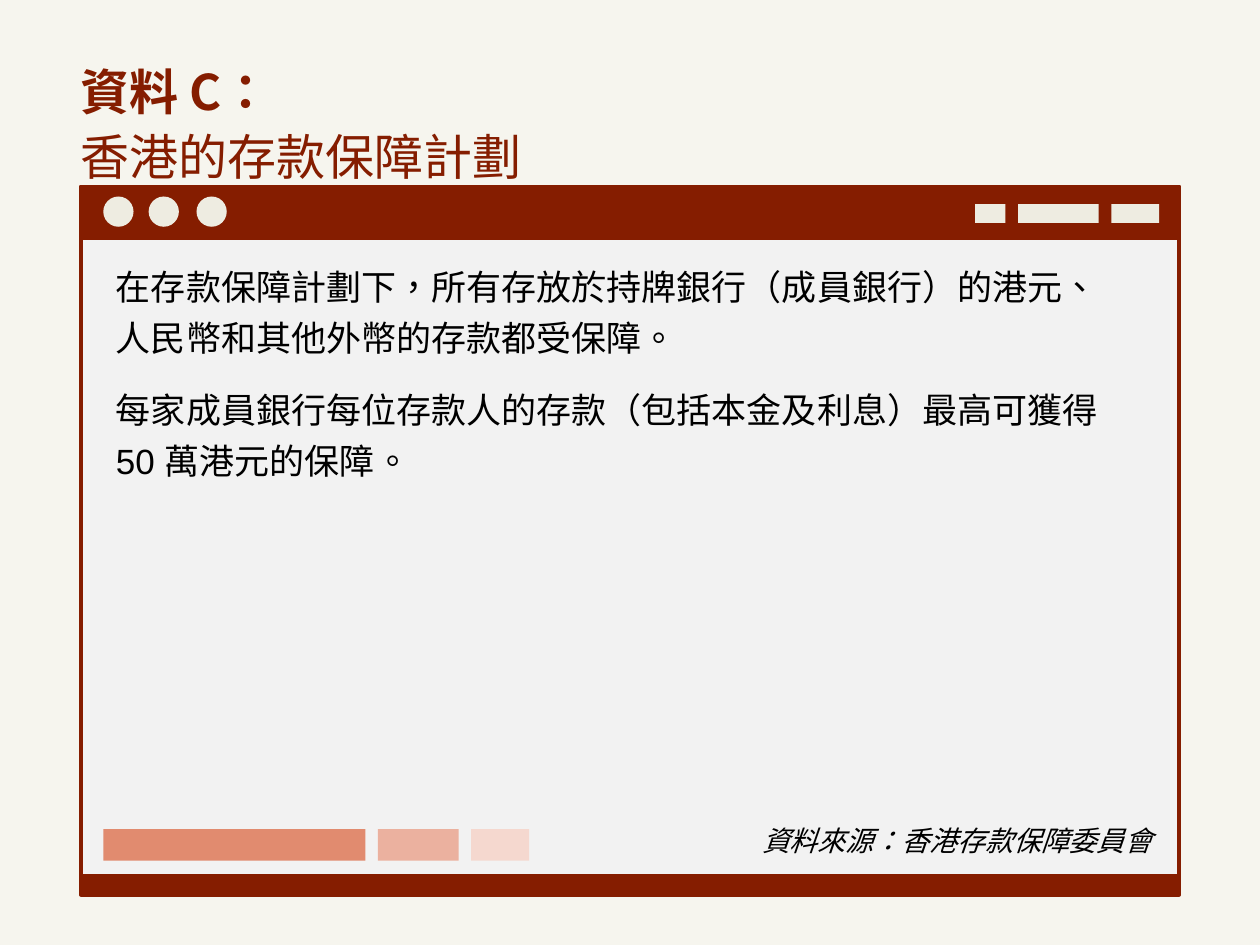
"""Build the slide on the Hong Kong deposit protection scheme."""
from lxml import etree
from pptx import Presentation
from pptx.dml.color import RGBColor
from pptx.enum import shapes, text
from pptx.oxml import ns
from pptx.util import Inches, Pt

CJK = "Noto Sans CJK SC"
MAROON, CREAM, PAPER, PANEL, BLACK = "851D00", "EEECE1", "F6F5EE", "F2F2F2", "000000"
TITLE = [("資料 C：", True), ("香港的存款保障計劃", False)]
POINTS = [
    ["在存款保障計劃下，所有存放於持牌銀行（成員銀行）的港元、", "人民幣和其他外幣的存款都受保障。"],
    ["每家成員銀行每位存款人的存款（包括本金及利息）最高可獲得", "50 萬港元的保障。"],
]
CREDIT = "資料來源：香港存款保障委員會"

LEFT, TOP, WIDTH, HEIGHT = 0.64, 1.48, 8.72, 5.62
HEADER, FOOTER, MARGIN, GAP = 0.42, 0.16, 0.18, 0.1
FRAME = [
    (TOP, HEIGHT, PANEL, 2.25),
    (TOP, HEADER, MAROON, 1),
    (TOP + HEIGHT - FOOTER, FOOTER, MAROON, 1),
]
DOTS = [0.82, 1.18, 1.56]
TABS = [(0.24, CREAM), (0.64, CREAM), (0.38, CREAM)]
SWATCHES = [(2.08, "E18B6F"), (0.64, "EBB19F"), (0.46, "F5D8CF")]


def color(value):
    return RGBColor.from_string(value)


def place(item, left, top, width, height):
    item.left, item.top, item.width, item.height = map(Inches, (left, top, width, height))


def draw(window, kind, box, fill, border=None):
    piece = window.shapes.add_shape(kind, *map(Inches, box))
    piece.shadow.inherit = False
    piece.fill.solid()
    piece.fill.fore_color.rgb = color(fill)
    if border:
        piece.line.color.rgb = color(MAROON)
        piece.line.width = Pt(border)
    else:
        piece.line.fill.background()


def draw_row(window, left, top, height, blocks):
    for width, fill in blocks:
        draw(window, shapes.MSO_SHAPE.RECTANGLE, (left, top, width, height), fill)
        left += width + GAP


def write(paragraph, words, size, ink, latin="Arial", bold=False, italic=False):
    run = paragraph.add_run()
    run.text = words
    font = run.font
    font.size, font.name, font.bold, font.italic = Pt(size), latin, bold, italic
    font.color.rgb = color(ink)
    properties = run._r.get_or_add_rPr()
    properties.set("lang", "zh-HK")
    etree.SubElement(properties, ns.qn("a:ea")).set("typeface", CJK)


def draw_window(slide):
    window = slide.shapes.add_group_shape()
    for top, height, fill, border in FRAME:
        draw(window, shapes.MSO_SHAPE.RECTANGLE, (LEFT, top, WIDTH, height), fill, border)
    for left in DOTS:
        draw(window, shapes.MSO_SHAPE.OVAL, (left, TOP + 0.08, 0.24, 0.24), CREAM)
    tabs_width = sum(width for width, _ in TABS) + GAP * (len(TABS) - 1)
    draw_row(window, LEFT + WIDTH - 0.16 - tabs_width, TOP + 0.14, 0.15, TABS)
    draw_row(window, LEFT + MARGIN, 6.58, 0.25, SWATCHES)


def write_title(heading):
    place(heading, 0.54, 0.23, 8.93, 1.45)
    frame = heading.text_frame
    frame.auto_size = text.MSO_AUTO_SIZE.NONE
    frame.vertical_anchor = text.MSO_ANCHOR.MIDDLE
    paragraph = frame.paragraphs[0]
    paragraph.alignment, paragraph.line_spacing = text.PP_ALIGN.LEFT, 1.1
    for index, (words, bold) in enumerate(TITLE):
        if index:
            paragraph.add_line_break()
        write(paragraph, words, 28, MAROON, CJK, bold)


def write_points(body):
    place(body, LEFT + MARGIN, 1.99, WIDTH - 2 * MARGIN, 4.6)
    frame = body.text_frame
    frame.auto_size = text.MSO_AUTO_SIZE.NONE
    for number, lines in enumerate(POINTS):
        paragraph = frame.add_paragraph() if number else frame.paragraphs[0]
        paragraph.line_spacing, paragraph.space_before = Pt(29), Pt(12)
        properties = paragraph._p.get_or_add_pPr()
        properties.set("marL", "0")
        properties.set("indent", "0")
        etree.SubElement(properties, ns.qn("a:buNone"))
        for index, words in enumerate(lines):
            if index:
                paragraph.add_line_break()
            write(paragraph, words, 20, BLACK)


def write_credit(slide):
    credit = slide.shapes.add_textbox(*map(Inches, (4.31, 6.49, 4.94, 0.37)))
    credit.text_frame.word_wrap = True
    paragraph = credit.text_frame.paragraphs[0]
    paragraph.alignment = text.PP_ALIGN.RIGHT
    write(paragraph, CREDIT, 16, BLACK, italic=True)


def main():
    deck = Presentation()
    deck.slide_width, deck.slide_height = Inches(10), Inches(7.5)
    slide = deck.slides.add_slide(deck.slide_layouts[1])
    slide.background.fill.solid()
    slide.background.fill.fore_color.rgb = color(PAPER)
    heading, body = slide.placeholders
    draw_window(slide)
    for holder in (heading, body):
        slide.shapes._spTree.append(holder._element)
    write_title(heading)
    write_points(body)
    write_credit(slide)
    deck.save("out.pptx")


if __name__ == "__main__":
    main()
